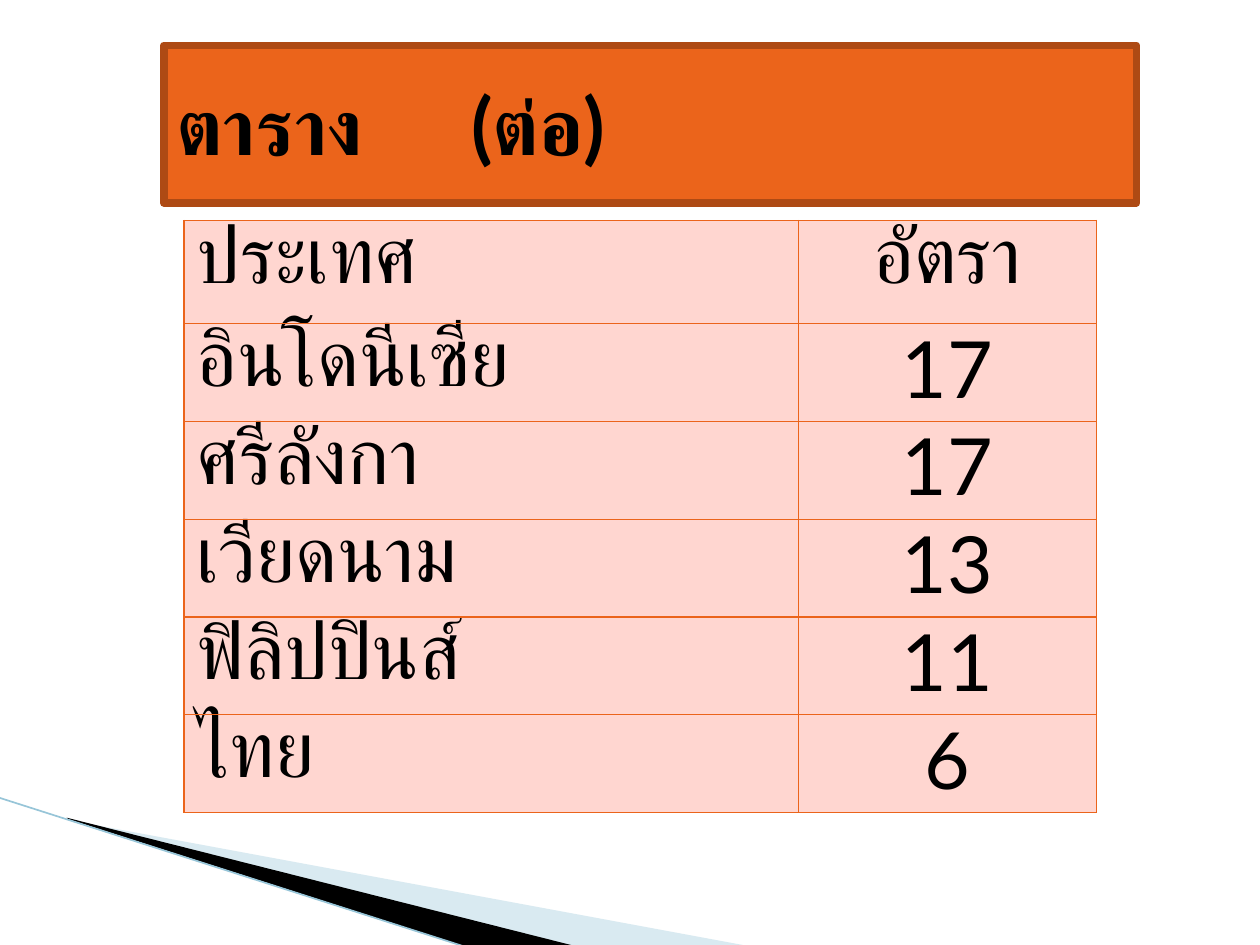
from lxml import etree
from pptx import Presentation
from pptx import util as u
from pptx.dml.color import RGBColor
from pptx.enum import shapes, text
from pptx.oxml import ns, parse_xml

Inches = u.Inches
FONT = "Lato"
COLORS = {
    "black": "000000",
    "orange": "EB641B",
    "rust": "AE4A14",
    "pink": "FFD6D0",
    "pale_blue": "A0CBDC",
    "edge_blue": "97C5D8",
}
RATES = [
    ("ประเทศ", "อัตรา"),
    ("อินโดนีเซีย", "17"),
    ("ศรีลังกา", "17"),
    ("เวียดนาม", "13"),
    ("ฟิลิปปินส์", "11"),
    ("ไทย", "6"),
]
COLUMN_WIDTHS = (4.88, 2.36)
HEADER_HEIGHT, ROW_HEIGHT = 0.82, 0.77


def rgb(name):
    return RGBColor.from_string(COLORS[name])


def write_text(frame, content, size=45, bold=False, align=text.PP_ALIGN.LEFT,
               line_spacing=None, tab=None):
    frame.word_wrap = True
    paragraph = frame.paragraphs[0]
    paragraph.alignment = align
    if line_spacing:
        paragraph.line_spacing = line_spacing
    if tab:
        tabs = etree.SubElement(paragraph._p.get_or_add_pPr(), ns.qn("a:tabLst"))
        etree.SubElement(tabs, ns.qn("a:tab"), pos=str(Inches(tab)), algn="l")
    run = paragraph.add_run()
    run.text = content
    run.font.name = FONT
    run.font.size = u.Pt(size)
    run.font.bold = bold
    run.font.color.rgb = rgb("black")


def add_wedge(slide, points, color, alpha=None):
    start, *rest = [(Inches(x), Inches(y)) for x, y in points]
    builder = slide.shapes.build_freeform(*start)
    builder.add_line_segments(rest, close=True)
    shape = builder.convert_to_shape()
    shape.shadow.inherit = False
    shape.fill.solid()
    shape.fill.fore_color.rgb = rgb(color)
    shape.line.fill.background()
    if alpha:
        fill_color = shape._element.spPr.find(".//" + ns.qn("a:srgbClr"))
        etree.SubElement(fill_color, ns.qn("a:alpha"), val=str(alpha * 1000))


def add_edge(slide, start, end):
    ends = [Inches(value) for value in start + end]
    line = slide.shapes.add_connector(shapes.MSO_CONNECTOR.STRAIGHT, *ends)
    line.line.color.rgb = rgb("edge_blue")
    line.line.width = u.Pt(0.95)
    etree.SubElement(line._element.spPr, ns.qn("a:effectLst"))


def add_title(slide, content):
    shape = slide.shapes.add_shape(
        shapes.MSO_SHAPE.RECTANGLE,
        Inches(1.3), Inches(0.36), Inches(7.72), Inches(1.25))
    shape.shadow.inherit = False
    shape.fill.solid()
    shape.fill.fore_color.rgb = rgb("orange")
    shape.line.color.rgb = rgb("rust")
    shape.line.width = u.Pt(4.33)
    shape.text_frame.vertical_anchor = text.MSO_ANCHOR.MIDDLE
    write_text(shape.text_frame, content, bold=True, tab=2.34)


def format_cell(cell):
    properties = cell._tc.get_or_add_tcPr()
    for side in ("lnL", "lnR", "lnT", "lnB"):
        properties.append(parse_xml(
            f'<a:{side} {ns.nsdecls("a")} w="{u.Pt(0.75)}"><a:solidFill>'
            f'<a:srgbClr val="{COLORS["orange"]}"/></a:solidFill></a:{side}>'))
    cell.fill.solid()
    cell.fill.fore_color.rgb = rgb("pink")


def add_rate_table(slide):
    height = HEADER_HEIGHT + ROW_HEIGHT * (len(RATES) - 1)
    table = slide.shapes.add_table(
        len(RATES), len(COLUMN_WIDTHS), Inches(1.46), Inches(1.75),
        Inches(sum(COLUMN_WIDTHS)), Inches(height)).table
    for column, width in zip(table.columns, COLUMN_WIDTHS):
        column.width = Inches(width)
    alignments = (text.PP_ALIGN.LEFT, text.PP_ALIGN.CENTER)
    for row_index, values in enumerate(RATES):
        table.rows[row_index].height = Inches(ROW_HEIGHT if row_index else HEADER_HEIGHT)
        for column_index, value in enumerate(values):
            cell = table.cell(row_index, column_index)
            format_cell(cell)
            write_text(cell.text_frame, value, align=alignments[column_index],
                       line_spacing=0.9)


def main():
    presentation = Presentation()
    presentation.slide_width = Inches(10)
    presentation.slide_height = Inches(7.5)
    slide = presentation.slides.add_slide(presentation.slide_layouts[6])

    # Corner decoration
    add_wedge(slide, [(0.55, 6.51), (5.95, 7.51), (4.56, 7.51), (0.55, 6.5)],
              "pale_blue", alpha=40)
    add_wedge(slide, [(0.53, 6.49), (4.57, 7.51), (3.72, 7.52), (0.54, 6.5)], "black")
    add_edge(slide, (-0.01, 6.33), (3.71, 7.52))

    # Title and table
    add_title(slide, "ตาราง\t(ต่อ)")
    add_rate_table(slide)

    presentation.save("out.pptx")


if __name__ == "__main__":
    main()
